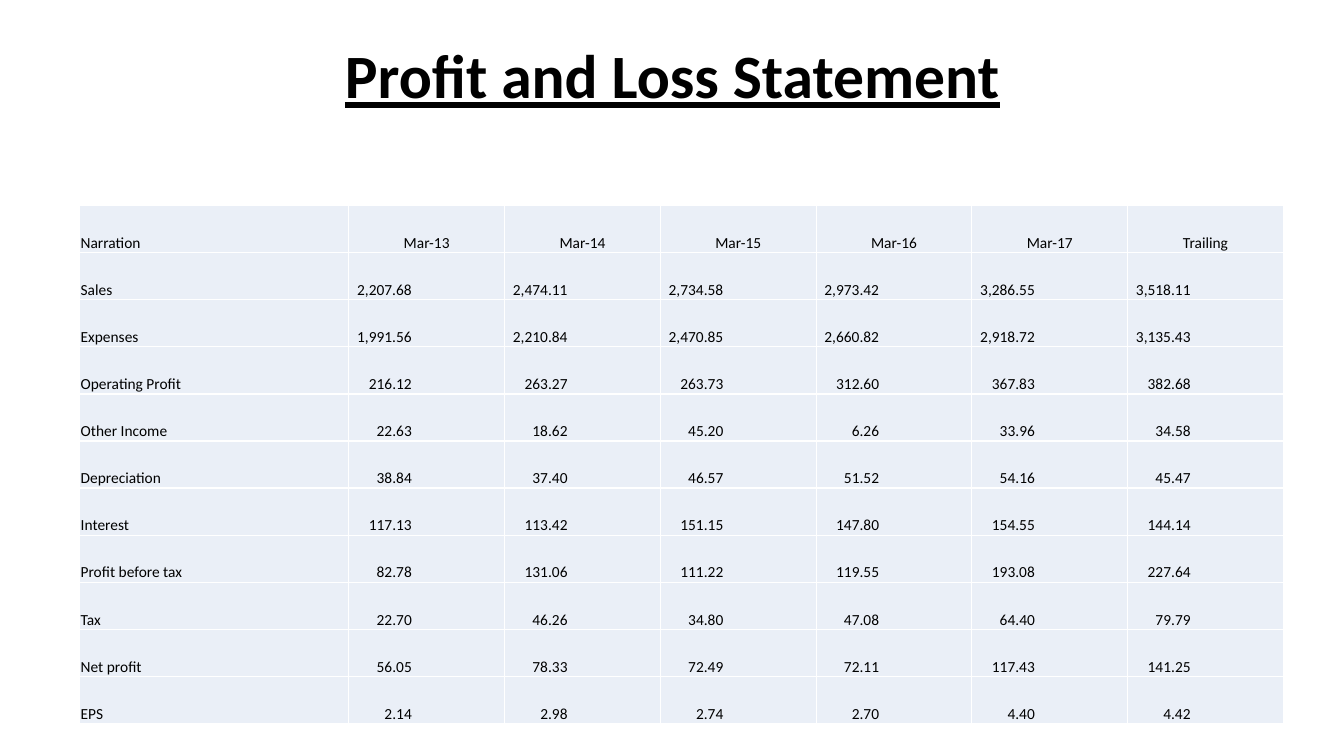
from lxml.etree import SubElement
from pptx import Presentation
from pptx.dml.color import RGBColor
from pptx.enum.text import MSO_ANCHOR as Anchor, PP_ALIGN as Align
from pptx.oxml.ns import qn
from pptx.util import Inches, Pt

PERIODS = ["Mar-13", "Mar-14", "Mar-15", "Mar-16", "Mar-17", "Trailing"]
STATEMENT = {
    "Sales": [2207.68, 2474.11, 2734.58, 2973.42, 3286.55, 3518.11],
    "Expenses": [1991.56, 2210.84, 2470.85, 2660.82, 2918.72, 3135.43],
    "Operating Profit": [216.12, 263.27, 263.73, 312.60, 367.83, 382.68],
    "Other Income": [22.63, 18.62, 45.20, 6.26, 33.96, 34.58],
    "Depreciation": [38.84, 37.40, 46.57, 51.52, 54.16, 45.47],
    "Interest": [117.13, 113.42, 151.15, 147.80, 154.55, 144.14],
    "Profit before tax": [82.78, 131.06, 111.22, 119.55, 193.08, 227.64],
    "Tax": [22.70, 46.26, 34.80, 47.08, 64.40, 79.79],
    "Net profit": [56.05, 78.33, 72.49, 72.11, 117.43, 141.25],
    "EPS": [2.14, 2.98, 2.74, 2.70, 4.40, 4.42],
}


def color(value):
    return RGBColor.from_string(value)


class StatementPage:
    font = "Calibri"
    ink = "000000"
    cell_fill = "EAEFF7"
    border = "FFFFFF"
    label_width = 2.67
    number_margin = 0.92

    def __init__(self, deck):
        self.page = deck.slides.add_slide(deck.slide_layouts[5])

    def add_text(self, frame, text, size, align, strong=False):
        para = frame.paragraphs[0]
        para.alignment = align
        span = para.add_run()
        span.text = text
        span.font.name = self.font
        span.font.size = Pt(size)
        span.font.bold = strong
        span.font.underline = strong
        span.font.color.rgb = color(self.ink)
        return para

    def title(self, text, left, top, width, height):
        box = self.page.shapes.title
        box.left, box.top = Inches(left), Inches(top)
        box.width, box.height = Inches(width), Inches(height)
        box.text_frame.word_wrap = True
        box.text_frame.vertical_anchor = Anchor.TOP
        para = self.add_text(box.text_frame, text, 44, Align.CENTER, True)
        para.line_spacing = 0.9

    def outline(self, cell):
        properties = cell._tc.get_or_add_tcPr()
        for side in ("a:lnL", "a:lnR", "a:lnT", "a:lnB"):
            line = SubElement(properties, qn(side), w=str(Pt(1)))
            fill = SubElement(line, qn("a:solidFill"))
            SubElement(fill, qn("a:srgbClr"), val=self.border)

    def cell(self, cell, text, align):
        cell.margin_left = cell.margin_top = Inches(0.01)
        cell.margin_right = Inches(self.number_margin if align == Align.RIGHT else 0.01)
        cell.margin_bottom = 0
        cell.vertical_anchor = Anchor.BOTTOM
        self.outline(cell)
        cell.fill.solid()
        cell.fill.fore_color.rgb = color(self.cell_fill)
        self.add_text(cell.text_frame, text, 11, align)

    def table(self, periods, statement, left, top, width, height):
        table = self.page.shapes.add_table(
            len(statement) + 1, len(periods) + 1,
            Inches(left), Inches(top), Inches(width), Inches(height)).table
        table.first_row = False
        table.horz_banding = False
        period_width = (width - self.label_width) / len(periods)
        for index, column in enumerate(table.columns):
            column.width = Inches(period_width if index else self.label_width)

        self.cell(table.cell(0, 0), "Narration", Align.LEFT)
        for column, period in enumerate(periods, 1):
            self.cell(table.cell(0, column), period, Align.CENTER)
        for row, (label, amounts) in enumerate(statement.items(), 1):
            self.cell(table.cell(row, 0), label, Align.LEFT)
            for column, amount in enumerate(amounts, 1):
                self.cell(table.cell(row, column), f"{amount:,.2f}", Align.RIGHT)


def main():
    deck = Presentation()
    deck.slide_width, deck.slide_height = Inches(13.33), Inches(7.5)
    page = StatementPage(deck)
    page.title("Profit and Loss Statement", 0.92, 0.4, 11.5, 1.45)
    page.table(PERIODS, STATEMENT, 0.79, 2.04, 11.94, 5.14)
    deck.save("out.pptx")


if __name__ == "__main__":
    main()
